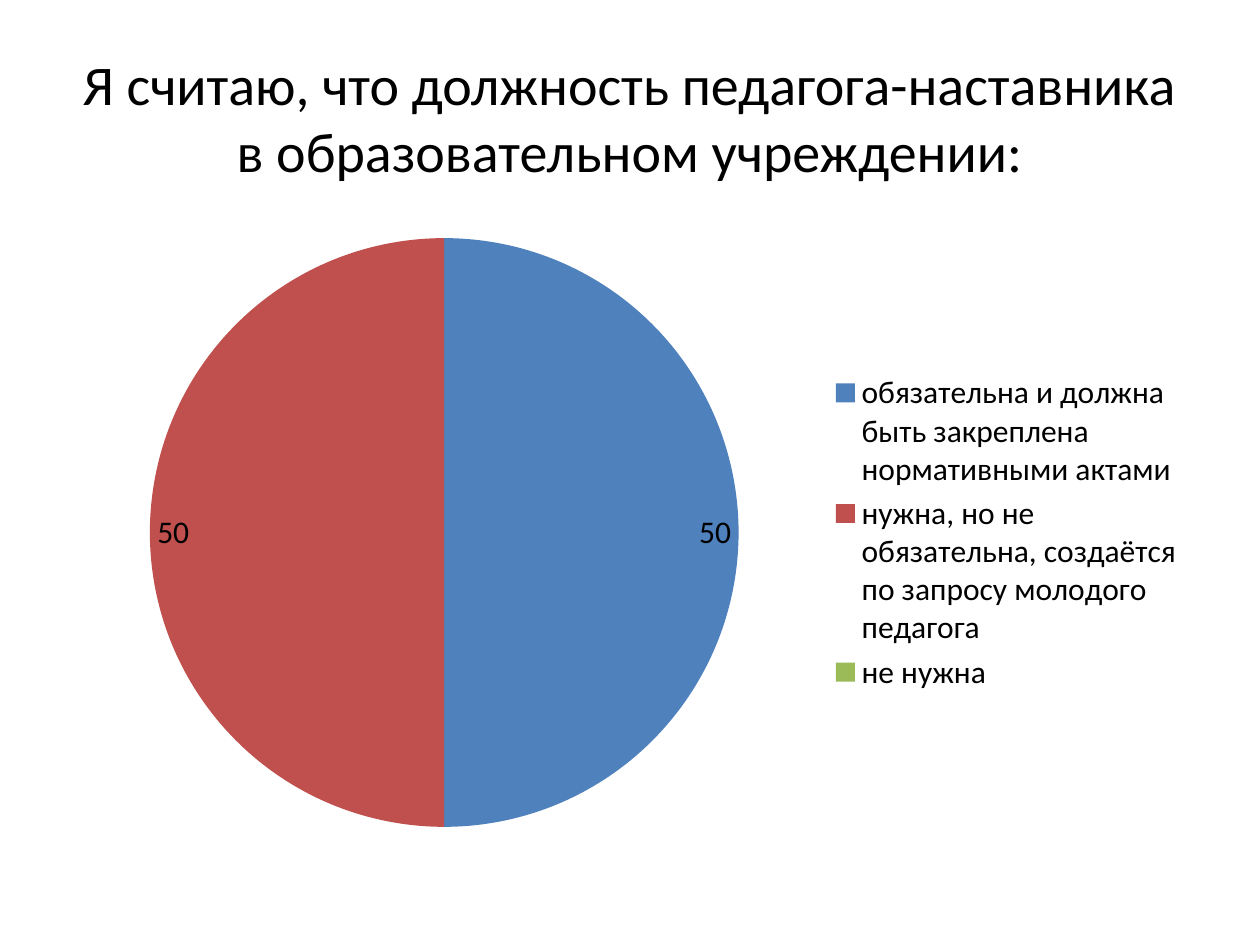
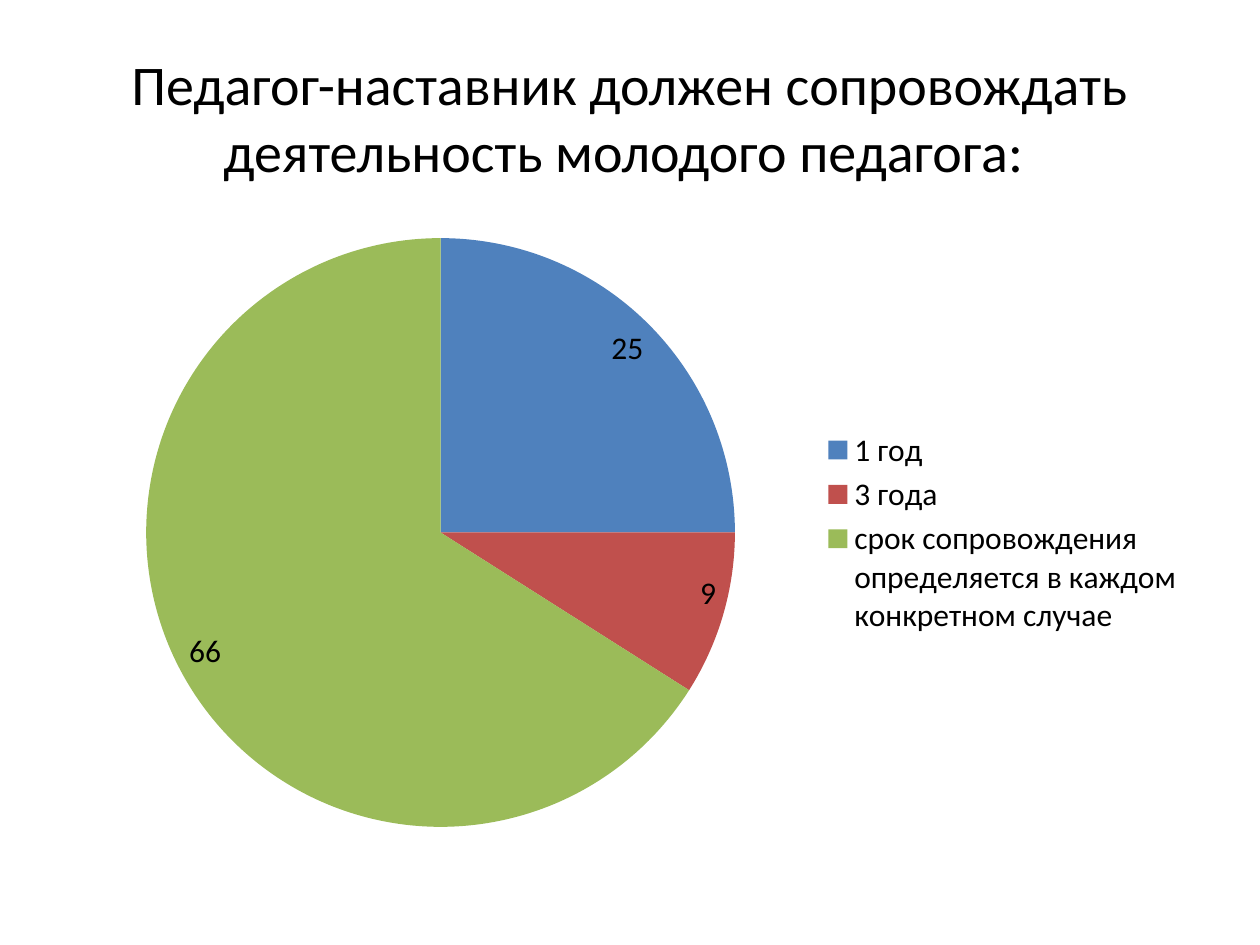
from pptx import Presentation
from pptx.chart.data import CategoryChartData
from pptx.dml.color import RGBColor
from pptx.enum import chart as ch, text
from pptx.util import Cm, Pt

# Shared style
FONT = "Calibri"
BLACK = RGBColor(0x00, 0x00, 0x00)
BLUE = RGBColor(0x4F, 0x81, 0xBD)
RED = RGBColor(0xC0, 0x50, 0x4D)
GREEN = RGBColor(0x9B, 0xBB, 0x59)
SLICE_COLORS = (BLUE, RED, GREEN)
LEFT, WIDTH = Cm(1.27), Cm(22.86)

# Survey questions with their answers in percent
SURVEY = [
    ("Я считаю, что должность педагога-наставника в образовательном учреждении:",
     {"обязательна и должна быть закреплена нормативными актами": 50,
      "нужна, но не обязательна, создаётся по запросу молодого педагога": 50,
      "не нужна": 0}),
    ("Педагог-наставник должен сопровождать деятельность молодого педагога: ",
     {"1 год": 25,
      "3 года": 9,
      "срок сопровождения определяется в каждом конкретном случае": 66}),
]


def style_font(font, size, color=BLACK):
    font.name = FONT
    font.size = Pt(size)
    font.bold = False
    font.color.rgb = color


def write_text(tf, content, size=18, color=BLACK, align=text.PP_ALIGN.CENTER,
               anchor=text.MSO_ANCHOR.MIDDLE):
    tf.word_wrap = True
    tf.auto_size = text.MSO_AUTO_SIZE.NONE
    tf.vertical_anchor = anchor
    p = tf.paragraphs[0]
    p.alignment = align
    r = p.add_run()
    r.text = content
    style_font(r.font, size, color)


def add_title(s, question):
    sp = s.shapes.title
    sp.left, sp.top, sp.width, sp.height = LEFT, Cm(0.76), WIDTH, Cm(3.18)
    write_text(sp.text_frame, question, size=32)


def add_answer_pie(s, answers):
    data = CategoryChartData()
    data.categories = list(answers)
    data.add_series("Series 1", list(answers.values()))
    chart = s.shapes.add_chart(ch.XL_CHART_TYPE.PIE, LEFT, Cm(4.45),
                               WIDTH, Cm(12.57), data).chart
    chart.has_title = False
    style_font(chart.font, 18)

    # Legend
    chart.has_legend = True
    chart.legend.position = ch.XL_LEGEND_POSITION.RIGHT
    chart.legend.include_in_layout = False

    # Slices
    plot = chart.plots[0]
    plot.vary_by_categories = True
    for i, color in enumerate(SLICE_COLORS):
        fill = plot.series[0].points[i].format.fill
        fill.solid()
        fill.fore_color.rgb = color

    # Value labels; the format hides zeros
    plot.has_data_labels = True
    labels = plot.data_labels
    labels.show_value = True
    labels.show_percentage = False
    labels.number_format = "0;;"
    labels.number_format_is_linked = False
    labels.position = ch.XL_LABEL_POSITION.INSIDE_END
    style_font(labels.font, 18)


def main():
    prs = Presentation()
    prs.slide_width, prs.slide_height = Cm(25.4), Cm(19.05)
    title_only = prs.slide_layouts[5]
    for question, answers in SURVEY:
        s = prs.slides.add_slide(title_only)
        add_title(s, question)
        add_answer_pie(s, answers)
    prs.save("out.pptx")


if __name__ == "__main__":
    main()
